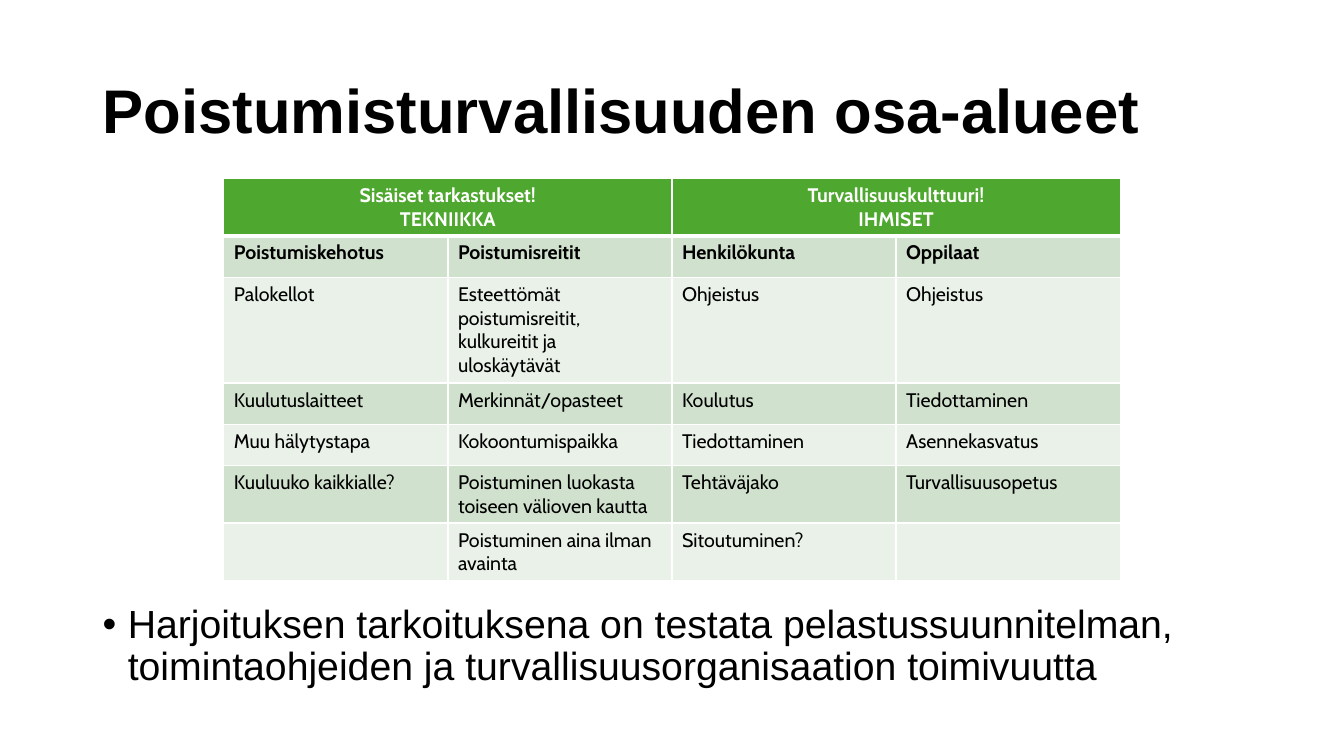
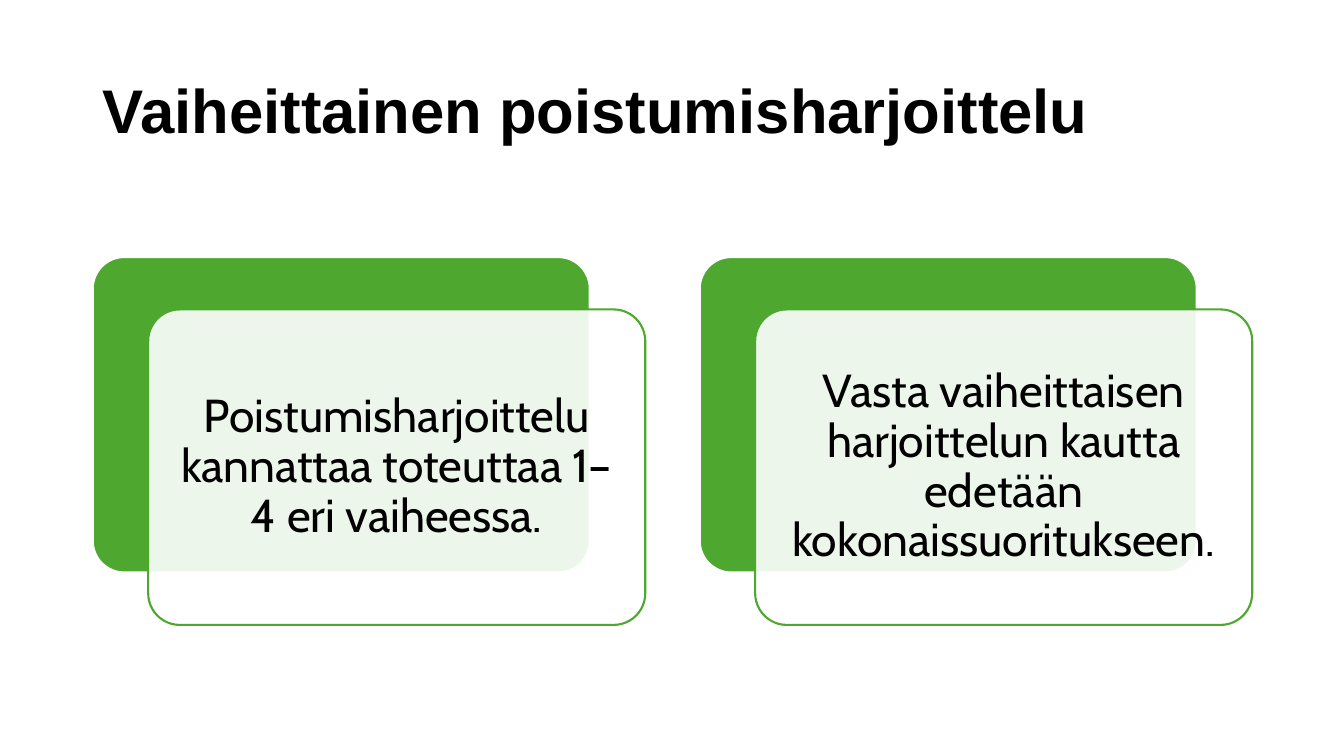
from lxml.etree import SubElement
from pptx import Presentation
from pptx.dml.color import RGBColor
from pptx.enum.shapes import MSO_SHAPE as Shape
from pptx.enum.text import MSO_ANCHOR as Anchor, PP_ALIGN as Align
from pptx.oxml.ns import qn
from pptx.util import Inches, Pt

COLORS = {"ink": "000000", "white": "FFFFFF", "green": "4EA72E",
          "band": "D0E1CD", "pale": "E9F1E8"}
FONTS = {
    "title": {"name": "Arial", "size": Pt(44), "bold": True},
    "body": {"name": "Arial", "size": Pt(28), "bold": False},
    "head": {"name": "Cabin", "size": Pt(14), "bold": True},
    "cell": {"name": "Cabin", "size": Pt(14), "bold": False},
    "card": {"name": "Cabin", "size": Pt(33), "bold": False},
}
LEFT, WIDE = 0.92, 11.5

AREAS = {
    "title": "Poistumisturvallisuuden osa-alueet",
    "groups": [("Sisäiset tarkastukset!", "TEKNIIKKA"),
               ("Turvallisuuskulttuuri!", "IHMISET")],
    "rows": [
        ("Poistumiskehotus", "Poistumisreitit", "Henkilökunta", "Oppilaat"),
        ("Palokellot", "Esteettömät poistumisreitit, kulkureitit ja uloskäytävät",
         "Ohjeistus", "Ohjeistus"),
        ("Kuulutuslaitteet", "Merkinnät/opasteet", "Koulutus", "Tiedottaminen"),
        ("Muu hälytystapa", "Kokoontumispaikka", "Tiedottaminen", "Asennekasvatus"),
        ("Kuuluuko kaikkialle?", "Poistuminen luokasta toiseen välioven kautta",
         "Tehtäväjako", "Turvallisuusopetus"),
        ("", "Poistuminen aina ilman avainta", "Sitoutuminen?", ""),
    ],
    "heights": [0.57, 0.41, 1.05, 0.41, 0.41, 0.57, 0.57],
    "point": "Harjoituksen tarkoituksena on testata pelastussuunnitelman, "
             "toimintaohjeiden ja turvallisuusorganisaation toimivuutta",
}
PHASES = {
    "title": "Vaiheittainen poistumisharjoittelu",
    "cards": ["Poistumisharjoittelu kannattaa toteuttaa 1–4 eri vaiheessa.",
              "Vasta vaiheittaisen harjoittelun kautta edetään kokonaissuoritukseen."],
}


def color(name):
    return RGBColor.from_string(COLORS[name])


def paint(item, name):
    item.fill.solid()
    item.fill.fore_color.rgb = color(name)


def write(para, text, style, ink="ink", align=Align.LEFT, gap=None):
    para.alignment = align
    para.line_spacing = gap
    font = para.add_run().font
    para.runs[0].text = text
    for key, value in FONTS[style].items():
        setattr(font, key, value)
    font.color.rgb = color(ink)


def add_text(slide, top, height, text, style, anchor=Anchor.TOP):
    box = slide.shapes.add_textbox(*map(Inches, (LEFT, top, WIDE, height)))
    frame = box.text_frame
    frame.word_wrap = True
    frame.vertical_anchor = anchor
    write(frame.paragraphs[0], text, style, gap=0.9)
    return frame.paragraphs[0]


def add_slide(deck, title):
    slide = deck.slides.add_slide(deck.slide_layouts[6])
    add_text(slide, 0.4, 1.45, title, "title", Anchor.MIDDLE)
    return slide


def add_bullet(para):
    props = para._p.get_or_add_pPr()
    props.set("marL", str(Inches(0.25)))
    props.set("indent", str(-Inches(0.25)))
    SubElement(props, qn("a:buFont"), typeface="Arial")
    SubElement(props, qn("a:buChar"), char="•")


def add_edges(cell, above, below):
    """Draw white cell borders, with point widths for the top and bottom."""
    props = cell._tc.get_or_add_tcPr()
    for side, width in zip("LRTB", (1, 1, above, below)):
        line = SubElement(props, qn(f"a:ln{side}"), w=str(Pt(width)))
        fill = SubElement(line, qn("a:solidFill"))
        SubElement(fill, qn("a:srgbClr"), val=COLORS["white"])


def add_grid(slide, groups, rows, heights):
    count = len(rows[0])
    span = count // len(groups)
    frame = slide.shapes.add_table(
        len(heights), count, *map(Inches, (2.22, 1.77, 8.89, sum(heights))))
    table = frame.table
    for row, height in zip(table.rows, heights):
        row.height = Inches(height)

    for col in range(count):
        cell = table.cell(0, col)
        add_edges(cell, 1, 3)
        paint(cell, "green")
    for index, (top, name) in enumerate(groups):
        cell = table.cell(0, index * span)
        cell.merge(table.cell(0, index * span + span - 1))
        frame = cell.text_frame
        write(frame.paragraphs[0], top, "head", "white", Align.CENTER)
        write(frame.add_paragraph(), name, "head", "white", Align.CENTER)

    for r, row in enumerate(rows, 1):
        for c, text in enumerate(row):
            cell = table.cell(r, c)
            add_edges(cell, 3 if r == 1 else 1, 1)
            paint(cell, "band" if r % 2 else "pale")
            write(cell.text_frame.paragraphs[0], text, "head" if r == 1 else "cell")


def add_panel(slide, left, top, fill, line):
    panel = slide.shapes.add_shape(
        Shape.ROUNDED_RECTANGLE, *map(Inches, (left, top, 4.93, 3.13)))
    panel.adjustments[0] = 0.1
    panel.shadow.inherit = False
    paint(panel, fill)
    panel.line.color.rgb = color(line)
    panel.line.width = Pt(1.5)
    return panel


def add_card(slide, left, text):
    add_panel(slide, left, 2.55, "green", "white")
    front = add_panel(slide, left + 0.55, 3.07, "white", "green")
    tint = front._element.spPr.find(qn("a:solidFill"))[0]
    SubElement(tint, qn("a:alpha"), val="90000")
    frame = front.text_frame
    frame.word_wrap = True
    frame.vertical_anchor = Anchor.MIDDLE
    for side in ("left", "right", "top", "bottom"):
        setattr(frame, f"margin_{side}", Inches(0.14))
    write(frame.paragraphs[0], text, "card", align=Align.CENTER, gap=0.9)


def main():
    deck = Presentation()
    deck.slide_width, deck.slide_height = Inches(13.33), Inches(7.5)

    slide = add_slide(deck, AREAS["title"])
    add_bullet(add_text(slide, 5.95, 1.12, AREAS["point"], "body"))
    add_grid(slide, AREAS["groups"], AREAS["rows"], AREAS["heights"])

    slide = add_slide(deck, PHASES["title"])
    for index, text in enumerate(PHASES["cards"]):
        add_card(slide, LEFT + index * 6.02, text)

    deck.save("out.pptx")


if __name__ == "__main__":
    main()
